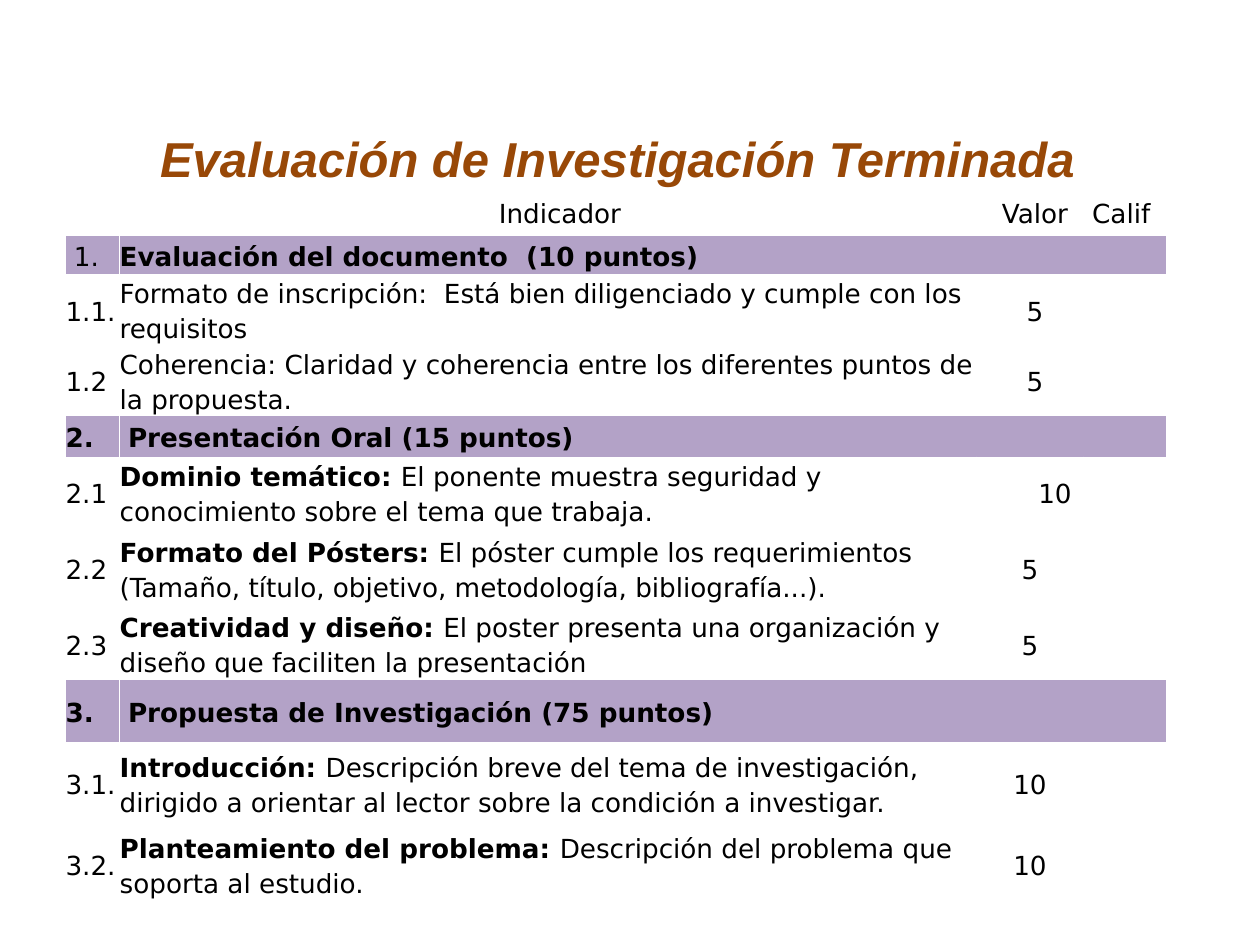
"""Build the slide with the scoring table for finished research."""
import pptx
import pptx.util
import pptx.dml.color
import pptx.enum.text
import pptx.oxml
import pptx.oxml.ns

Inches = pptx.util.Inches
Pt = pptx.util.Pt
RGBColor = pptx.dml.color.RGBColor
ALIGN = pptx.enum.text.PP_ALIGN
MIDDLE = pptx.enum.text.MSO_ANCHOR.MIDDLE

BROWN = RGBColor(0x98, 0x48, 0x07)
LILAC = RGBColor(0xB3, 0xA2, 0xC7)
WHITE = RGBColor(0xFF, 0xFF, 0xFF)
BLACK = RGBColor(0, 0, 0)

WIDTHS = [0.43, 6.8, 0.17, 0.59, 0.09, 0.66]
HEAD = BASIC = (0, 1, 3, 4)
PART = (0, 1)
WIDE = (0, 1, 2, 5)

# Each row: height, first column of each cell, fill, cells; runs alternate plain and bold.
ROWS = [
    (0.37, HEAD, None, [(), ("Indicador",), ("Valor",), ("Calif",)]),
    (0.31, PART, LILAC, [(" 1.",), ("", "Evaluación del documento  (10 puntos)")]),
    (0.56, BASIC, None, [("1.1.",), ("Formato de inscripción:  Está bien diligenciado y cumple con los requisitos",),
                         ("5",), ()]),
    (0.56, BASIC, None, [("1.2",), ("Coherencia: Claridad y coherencia entre los diferentes puntos de la propuesta.",),
                         ("5",), ()]),
    (0.33, PART, LILAC, [("", "2."), (" ", "Presentación Oral (15 puntos)")]),
    (0.56, WIDE, None, [("2.1",), ("", "Dominio temático: ",
                         "El ponente muestra seguridad y conocimiento sobre el tema que trabaja."), ("10",), ()]),
    (0.64, WIDE, None, [("2.2",), ("", "Formato del Pósters: ",
                         "El póster cumple los requerimientos (Tamaño, título, objetivo, metodología, "
                         "bibliografía...)."), ("5",), ()]),
    (0.56, WIDE, None, [("2.3",), ("", "Creatividad y diseño: ",
                         "El poster presenta una organización y diseño que faciliten la presentación"), ("5",), ()]),
    (0.51, PART, LILAC, [("", "3."), (" ", "Propuesta de Investigación (75 puntos)")]),
    (0.64, WIDE, WHITE, [("3.1.",), ("", "Introducción: ",
                         "Descripción breve del tema de investigación, dirigido a orientar al lector sobre la "
                         "condición a investigar."), ("10",), ()]),
    (0.64, WIDE, WHITE, [("3.2.",), ("", "Planteamiento del problema: ",
                         "Descripción del problema que soporta al estudio."), ("10",), ()]),
]


def add_run(para, text, face, size, color, bold, italic=False):
    """Add one formatted run."""
    run = para.add_run()
    run.text = text
    font = run.font
    font.name, font.size, font.bold, font.italic = face, Pt(size), bold, italic
    font.color.rgb = color


def add_title(slide):
    """Place and write the title."""
    title = slide.shapes.title
    title.left, title.top = Inches(0.59), Inches(0.84)
    title.width, title.height = Inches(8.62), Inches(0.83)
    frame = title.text_frame
    frame.vertical_anchor = MIDDLE
    para = frame.paragraphs[0]
    para.alignment = ALIGN.CENTER
    add_run(para, "Evaluación de Investigación Terminada", "Arial", 28, BROWN, True, True)


def style_cell(cell, fill):
    """Set margins, fill and white borders of a cell."""
    cell.margin_left = cell.margin_right = cell.margin_top = cell.margin_bottom = 0
    cell.vertical_anchor = MIDDLE
    if fill is None:
        cell.fill.background()
    else:
        cell.fill.solid()
        cell.fill.fore_color.rgb = fill
    props = cell._tc.get_or_add_tcPr()
    for spot, side in enumerate(("lnL", "lnR", "lnT", "lnB")):
        props.insert(spot, pptx.oxml.parse_xml(
            f'<a:{side} {pptx.oxml.ns.nsdecls("a")} w="12700"><a:solidFill>'
            f'<a:srgbClr val="{WHITE}"/></a:solidFill></a:{side}>'))


def write_cell(cell, runs, center):
    """Write plain and bold runs in turn."""
    para = cell.text_frame.paragraphs[0]
    para.alignment = ALIGN.CENTER if center else ALIGN.LEFT
    para.line_spacing = 1.15
    for spot, text in enumerate(runs):
        if text:
            add_run(para, text, "DejaVu Sans", 15, BLACK, spot % 2 == 1)


def indent(cell, left, first):
    """Set the left margin and first-line indent."""
    props = cell.text_frame.paragraphs[0]._p.get_or_add_pPr()
    props.set("marL", str(Inches(left)))
    props.set("indent", str(Inches(first)))


def add_grid(slide):
    """Add the scoring table."""
    high = sum(row[0] for row in ROWS)
    frame = slide.shapes.add_table(len(ROWS), len(WIDTHS), Inches(0.52), Inches(1.5),
                                   Inches(sum(WIDTHS)), Inches(high))
    table = frame.table
    table.first_row = table.horz_banding = False
    for col, width in zip(table.columns, WIDTHS):
        col.width = Inches(width)
    for y, (height, starts, fill, cells) in enumerate(ROWS):
        table.rows[y].height = Inches(height)
        for x in range(len(WIDTHS)):
            style_cell(table.cell(y, x), fill)
        ends = starts[1:] + (len(WIDTHS),)
        for x, end, runs in zip(starts, ends, cells):
            cell = table.cell(y, x)
            if end - x > 1:
                cell.merge(table.cell(y, end - 1))
            write_cell(cell, runs, x > 1 or y == 0)
    table.cell(0, 0).fill.solid()
    table.cell(0, 0).fill.fore_color.rgb = WHITE
    table.cell(0, 1).margin_left = Inches(0.02)
    table.cell(0, 4).margin_left = Inches(0.03)
    table.cell(5, 2).text_frame.paragraphs[0].alignment = ALIGN.LEFT
    indent(table.cell(5, 2), 0, 0.49)
    indent(table.cell(6, 2), 0.39, -0.39)


def main():
    """Build and save the slide."""
    deck = pptx.Presentation()
    deck.slide_width, deck.slide_height = Inches(10), Inches(7.5)
    slide = deck.slides.add_slide(deck.slide_layouts[5])
    add_title(slide)
    add_grid(slide)
    deck.save("out.pptx")


if __name__ == "__main__":
    main()
